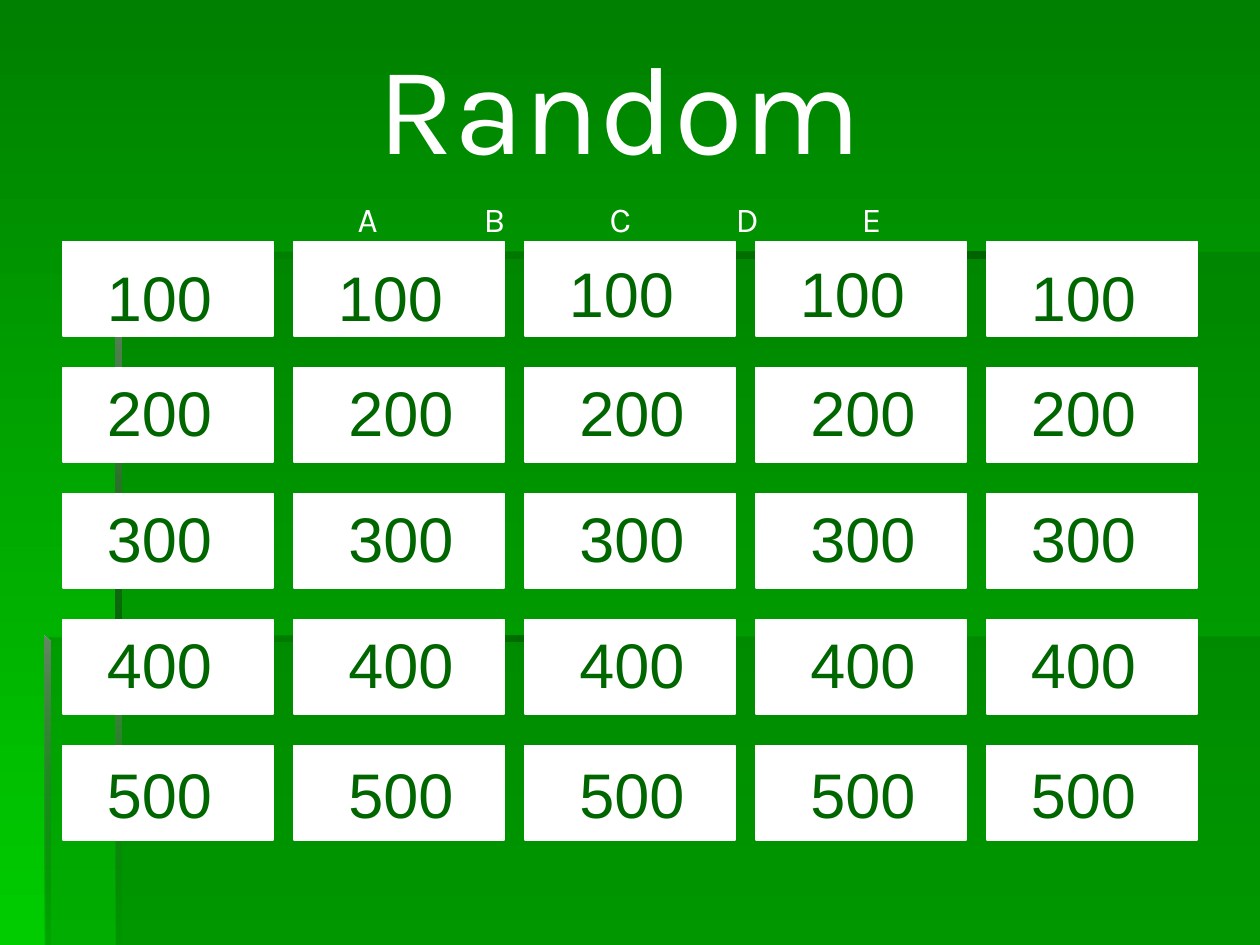
from lxml.etree import SubElement
from pptx import Presentation
from pptx.dml.color import RGBColor
from pptx.enum.shapes import MSO_SHAPE
from pptx.enum.text import MSO_AUTO_SIZE, PP_ALIGN
from pptx.oxml.ns import qn
from pptx.util import Pt

COLORS = {
    "top": "008000", "bottom": "00CC00", "dark": "006600",
    "deep": "005E00", "grey": "668666", "white": "FFFFFF",
}
RIGHT, DOWN = 0, 270  # counter-clockwise gradient angles
WIDTH, HEIGHT = 720, 540


def rgb(name):
    return RGBColor.from_string(COLORS[name])


class Board:
    """Holds the text style and the slide being drawn."""

    paragraph_gap = 50  # percent of a line

    def __init__(self, slide):
        self.slide = slide

    def set_alpha(self, color, percent):
        if percent < 100:
            SubElement(color, qn("a:alpha")).set("val", str(percent * 1000))

    def gradient(self, fill, stops, angle):
        """Fill with two (colour, opacity percent) stops."""
        fill.gradient()
        fill.gradient_angle = angle
        for stop, (name, opacity) in zip(fill.gradient_stops, stops):
            stop.color.rgb = rgb(name)
            self.set_alpha(stop._gs[0], opacity)

    def outline(self, points):
        points = [(Pt(x), Pt(y)) for x, y in points]
        builder = self.slide.shapes.build_freeform(*points[0])
        builder.add_line_segments(points[1:], close=True)
        sp = builder.convert_to_shape()
        sp.shadow.inherit = False
        sp.line.fill.background()
        return sp

    def panel(self, points):
        sp = self.outline(points)
        sp.fill.solid()
        sp.fill.fore_color.rgb = rgb("dark")
        self.set_alpha(sp.fill._xPr.find(qn("a:solidFill"))[0], 30)

    def edge(self, points, stops, angle):
        self.gradient(self.outline(points).fill, stops, angle)

    def card(self, x, y, w, h):
        sp = self.slide.shapes.add_shape(
            MSO_SHAPE.RECTANGLE, Pt(x), Pt(y), Pt(w), Pt(h))
        sp.shadow.inherit = False
        sp.fill.solid()
        sp.fill.fore_color.rgb = rgb("white")
        sp.line.color.rgb = rgb("white")
        sp.line.width = Pt(0.75)

    def text(self, box, paragraphs, font, color, align=None):
        """Each paragraph is a list of (text, size) runs."""
        tf = self.slide.shapes.add_textbox(*map(Pt, box)).text_frame
        tf.word_wrap = True
        tf.auto_size = MSO_AUTO_SIZE.SHAPE_TO_FIT_TEXT
        for i, runs in enumerate(paragraphs):
            p = tf.add_paragraph() if i else tf.paragraphs[0]
            p.alignment = align
            gap = SubElement(p._p.get_or_add_pPr(), qn("a:spcBef"))
            SubElement(gap, qn("a:spcPct")).set(
                "val", str(self.paragraph_gap * 1000))
            for content, size in runs:
                r = p.add_run()
                r.text = content
                r.font.color.rgb = rgb(color)
                for key, value in {"name": font, "size": Pt(size)}.items():
                    setattr(r.font, key, value)


def draw_backdrop(board):
    board.gradient(board.slide.background.fill,
                   [("top", 100), ("bottom", 100)], DOWN)
    board.panel([(66.2, 363.6), (66.2, HEIGHT), (WIDTH, HEIGHT),
                 (WIDTH, 363.6)])
    board.panel([(67.7, 364.3), (25.9, 364.3), (25.9, HEIGHT),
                 (WIDTH, HEIGHT), (WIDTH, 144), (67.7, 144)])

    fade_in = [("dark", 0), ("deep", 100)]
    for x, y, length, thick in ((66, 144, 575.5, 3.9), (25.2, 363, 360, 3.5)):
        board.edge([(x, y), (x, y + thick), (x + length, y + thick),
                    (x + length, y)], fade_in, RIGHT)
        if y == 144:
            board.edge([(66, 144), (66, 367.2), (69.6, 367.2), (69.4, 147)],
                       [("grey", 100), ("dark", 100)], DOWN)
            board.edge([(65.8, HEIGHT), (69.6, HEIGHT), (69.4, 366),
                        (65.8, 363)], [("grey", 100), ("dark", 0)], DOWN)
    board.edge([(25.2, 363), (25.2, HEIGHT), (28.8, HEIGHT), (28.8, 366.5)],
               [("grey", 100), ("dark", 10)], DOWN)


def draw_cards(board):
    for row in range(5):
        for col in range(5):
            x, y = 36 + 132 * col, 138 + 72 * row
            inner = col in (1, 2, 3)
            dx = 24 if inner and row else 18
            dy = (4 if col in (2, 3) else 6) if row == 0 else 2 * (row == 4)
            board.card(x, y, 120, 54)
            board.text((x + dx, y + dy, 78, 50.4),
                       [[(str(100 * (row + 1)), 36)]], "Arial", "dark")


def draw_heading(board):
    letters = [("A", 20)]
    for letter in "BCDE":
        letters += [("\t\t", 18), (letter, 20)]
    board.text((30, 13, 648, 129.6), [[("Random", 72)], letters],
               "Karla", "white", PP_ALIGN.CENTER)


def main():
    prs = Presentation()
    prs.slide_width, prs.slide_height = Pt(WIDTH), Pt(HEIGHT)
    board = Board(prs.slides.add_slide(prs.slide_layouts[6]))
    draw_backdrop(board)
    draw_cards(board)
    draw_heading(board)
    prs.save("out.pptx")


if __name__ == "__main__":
    main()
